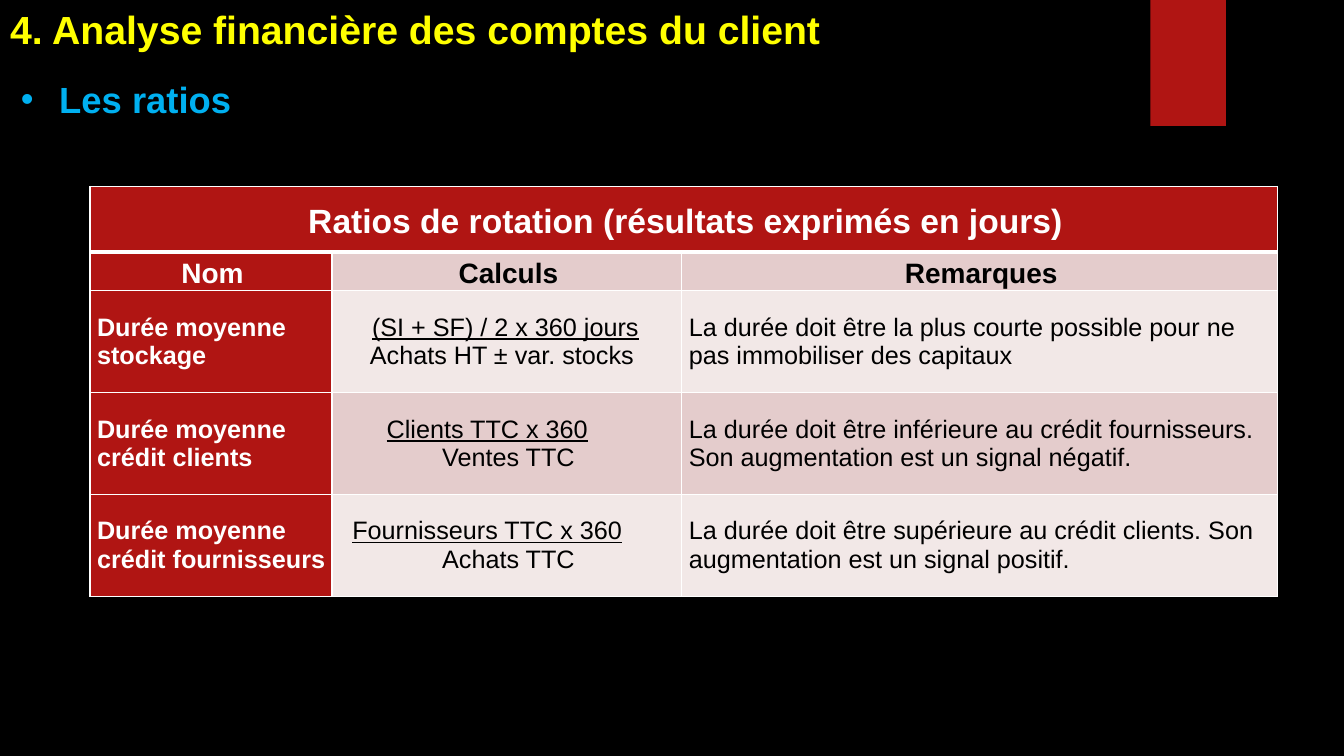
from lxml.etree import SubElement
from pptx import Presentation
from pptx.dml.color import RGBColor
from pptx.enum.shapes import MSO_SHAPE as Shape
from pptx.enum.text import MSO_ANCHOR as Anchor, PP_ALIGN as Align
from pptx.oxml import parse_xml
from pptx.oxml.ns import nsdecls, qn
from pptx.util import Inches, Pt

BLACK = RGBColor(0x00, 0x00, 0x00)
WHITE = RGBColor(0xFF, 0xFF, 0xFF)
YELLOW = RGBColor(0xFF, 0xFF, 0x00)
BLUE = RGBColor(0x00, 0xB0, 0xF0)
RED = RGBColor(0xB0, 0x15, 0x13)
PINK = RGBColor(0xE4, 0xCC, 0xCC)
PALE = RGBColor(0xF2, 0xE8, 0xE7)

FONT = "Arial"
WIDTH, HEIGHT = Inches(13.333), Inches(7.5)
COLUMN, ROW = WIDTH / 100, HEIGHT / 100  # grid of 100 by 100

# Relative sizes of the table's columns and rows
COLUMN_SHARES = (2.4, 3.47, 5.91)
ROW_SHARES = (0.65, 0.37, 1.01, 1.01, 1.01)

TABLE_TITLE = "Ratios de rotation (résultats exprimés en jours)"
HEADINGS = ("Nom", "Calculs", "Remarques")
# Name lines, numerator, denominator, fraction offsets in inches, remark
RATIOS = (
    (("Durée moyenne stockage",),
     "(SI + SF) / 2 x 360 jours", "Achats HT ± var. stocks", (0.17, 0.07, 0),
     "La durée doit être la plus courte possible pour ne pas immobiliser "
     "des capitaux"),
    (("Durée moyenne", "crédit clients"),
     "Clients TTC x 360", "Ventes TTC", (0.46, 0, 0.42),
     "La durée doit être inférieure au crédit fournisseurs. "
     "Son augmentation est un signal négatif."),
    (("Durée moyenne crédit fournisseurs",),
     "Fournisseurs TTC x 360", "Achats TTC", (0.46, 0, 0.42),
     "La durée doit être supérieure au crédit clients. "
     "Son augmentation est un signal positif."),
)


def grid_box(left, top, width, height):
    return (round(left * COLUMN), round(top * ROW),
            round(width * COLUMN), round(height * ROW))


def add_run(paragraph, text, size, color, bold=False, underline=False):
    run = paragraph.add_run()
    run.text = text
    font = run.font
    font.name, font.size, font.bold = FONT, Pt(size), bold
    font.underline = underline
    font.color.rgb = color


def indent(paragraph, left, first=0):
    properties = paragraph._p.get_or_add_pPr()
    properties.set("marL", str(Inches(left)))
    properties.set("indent", str(Inches(first)))
    return properties


def add_band(slide, box):
    band = slide.shapes.add_shape(Shape.RECTANGLE, *box)
    band.shadow.inherit = False
    band.fill.solid()
    band.fill.fore_color.rgb = RED
    band.line.fill.background()


def add_title(slide, box):
    title = slide.shapes.title
    title.left, title.top, title.width, title.height = box
    frame = title.text_frame
    frame.word_wrap = True
    frame.vertical_anchor = Anchor.TOP
    paragraph = frame.paragraphs[0]
    paragraph.alignment = Align.LEFT
    paragraph.line_spacing = 1.0
    add_run(paragraph, "4. Analyse financière des comptes du client", 28, YELLOW, bold=True)


def add_subtitle(slide, box):
    frame = slide.shapes.add_textbox(*box).text_frame
    frame.word_wrap = True
    paragraph = frame.paragraphs[0]
    properties = indent(paragraph, 0.38, -0.38)
    SubElement(properties, qn("a:buFont"), typeface=FONT)
    SubElement(properties, qn("a:buChar"), char="•")
    paragraph.alignment = Align.JUSTIFY
    add_run(paragraph, "Les ratios", 26, BLUE, bold=True)


def style_cell(cell, fill, top=1, bottom=1):
    """Sets borders (in points), fill, margins and anchor."""
    properties = cell._tc.get_or_add_tcPr()
    for side, width in (("L", 1), ("R", 1), ("T", top), ("B", bottom)):
        properties.append(parse_xml(
            f'<a:ln{side} {nsdecls("a")} w="{Pt(width)}"><a:solidFill>'
            f'<a:srgbClr val="{WHITE}"/></a:solidFill></a:ln{side}>'))
    cell.fill.solid()
    cell.fill.fore_color.rgb = fill
    cell.vertical_anchor = Anchor.MIDDLE
    cell.margin_left, cell.margin_right = Inches(0.07), Inches(0.04)
    cell.margin_top = cell.margin_bottom = 0


def write_heading(cell, text, size, color):
    paragraph = cell.text_frame.paragraphs[0]
    paragraph.alignment = Align.CENTER
    paragraph.line_spacing = 1.15
    add_run(paragraph, text, size, color, bold=True)


def write_lines(cell, lines, color=BLACK, bold=False):
    frame = cell.text_frame
    for index, line in enumerate(lines):
        paragraph = frame.add_paragraph() if index else frame.paragraphs[0]
        add_run(paragraph, line, 18, color, bold)


def write_fraction(cell, numerator, denominator, offsets):
    right_margin, upper_indent, lower_indent = offsets
    cell.margin_right = Inches(right_margin)
    upper = cell.text_frame.paragraphs[0]
    lower = cell.text_frame.add_paragraph()
    for paragraph, text, left, underline in (
            (upper, numerator, upper_indent, True),
            (lower, denominator, lower_indent, False)):
        indent(paragraph, left)
        paragraph.alignment = Align.CENTER
        add_run(paragraph, text, 18, BLACK, underline=underline)


def add_ratio_table(slide, box):
    width, height = box[2:]
    table = slide.shapes.add_table(len(ROW_SHARES), len(COLUMN_SHARES), *box).table
    table.horz_banding = False
    for column, share in zip(table.columns, COLUMN_SHARES):
        column.width = round(width * share / sum(COLUMN_SHARES))
    for row, share in zip(table.rows, ROW_SHARES):
        row.height = round(height * share / sum(ROW_SHARES))

    # Title across all columns
    table.cell(0, 0).merge(table.cell(0, 2))
    for column in range(3):
        style_cell(table.cell(0, column), RED, bottom=3)
    write_heading(table.cell(0, 0), TABLE_TITLE, 24, WHITE)

    # Column headings
    for column, heading in enumerate(HEADINGS):
        cell = table.cell(1, column)
        style_cell(cell, PINK if column else RED, top=3)
        write_heading(cell, heading, 20, BLACK if column else WHITE)

    # One row per ratio, in alternating tints
    for row, (name, numerator, denominator, offsets, remark) in enumerate(RATIOS, 2):
        name_cell, formula_cell, remark_cell = table.rows[row].cells
        tint = PINK if row % 2 else PALE
        for cell, fill in ((name_cell, RED), (formula_cell, tint), (remark_cell, tint)):
            style_cell(cell, fill)
        write_lines(name_cell, name, WHITE, bold=True)
        write_fraction(formula_cell, numerator, denominator, offsets)
        write_lines(remark_cell, (remark,))


def main():
    presentation = Presentation()
    presentation.slide_width, presentation.slide_height = WIDTH, HEIGHT
    slide = presentation.slides.add_slide(presentation.slide_layouts[5])
    slide.background.fill.solid()
    slide.background.fill.fore_color.rgb = BLACK
    add_band(slide, grid_box(85.6, 0, 5.62, 16.67))
    add_title(slide, grid_box(0, 0, 84.3, 7.6))
    add_subtitle(slide, grid_box(0.82, 9.6, 95.2, 7.2))
    add_ratio_table(slide, grid_box(6.7, 24.67, 88.37, 54))
    presentation.save("out.pptx")


if __name__ == "__main__":
    main()
